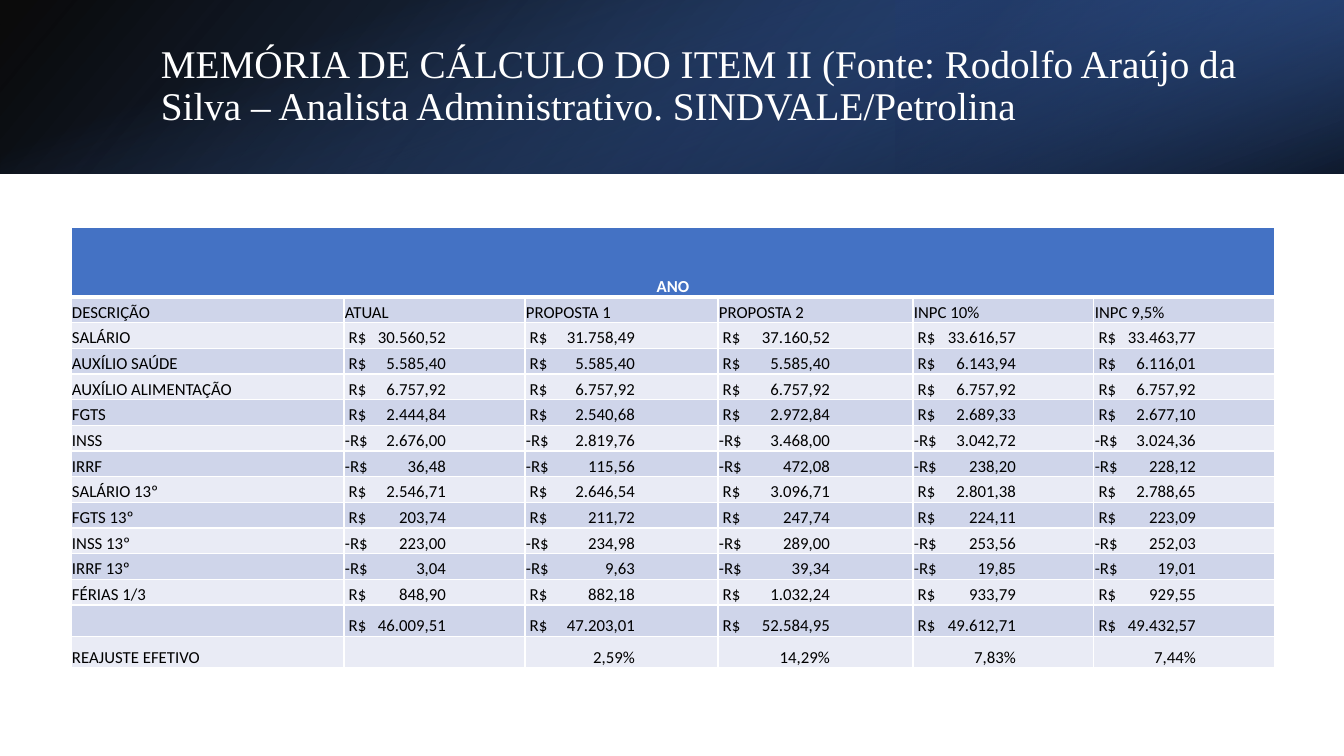
"""Build the slide with the calculation table for item II."""
from lxml import etree
from pptx import Presentation
from pptx.dml.color import RGBColor
from pptx.enum.shapes import MSO_SHAPE as Shape
from pptx.enum.text import MSO_ANCHOR as Anchor, PP_ALIGN as Align
from pptx.oxml import parse_xml
from pptx.oxml.ns import nsdecls, qn
from pptx.util import Pt

PX = 914400 / 100.8
WHITE = RGBColor(0xFF, 0xFF, 0xFF)
BLACK = RGBColor(0x00, 0x00, 0x00)
BLUE = RGBColor(0x44, 0x72, 0xC4)
DEEP_BLUE = RGBColor(0x2F, 0x55, 0x97)
NAVY = RGBColor(0x20, 0x38, 0x64)
BAND_DARK = RGBColor(0xCF, 0xD5, 0xEA)
BAND_LIGHT = RGBColor(0xE9, 0xEB, 0xF5)


def px(*lengths):
    return [round(length * PX) for length in lengths]


def write(frame, text, size=12, font="Calibri", color=BLACK, bold=False,
          align=Align.LEFT, spacing=None, tab=None):
    paragraph = frame.paragraphs[0]
    paragraph.alignment = align
    paragraph.line_spacing = spacing
    if tab:
        tab_list = etree.SubElement(paragraph._p.get_or_add_pPr(), qn("a:tabLst"))
        etree.SubElement(tab_list, qn("a:tab"), pos=str(px(tab)[0]), algn="r")
    run = paragraph.add_run()
    run.text = text
    run.font.size = Pt(size)
    run.font.name = font
    run.font.bold = bold
    run.font.color.rgb = color


presentation = Presentation()
presentation.slide_width, presentation.slide_height = px(1344, 756)
slide = presentation.slides.add_slide(presentation.slide_layouts[6])

BANNER = [
    ((0, 0, 1344, 174), 0, True, 140, [(0, BLACK, 96), (100, DEEP_BLUE, 100)]),
    ((896, 0, 448, 174), 180, True, 320, [(19, NAVY, 68), (100, BLUE, 79)]),
    ((585, -585, 174, 1344), 90, False, 340, [(23, BLUE, 0), (99, BLACK, 74)]),
]
for box, rotation, flipped, angle, stops in BANNER:
    shape = slide.shapes.add_shape(Shape.RECTANGLE, *px(*box))
    shape.rotation = rotation
    properties = shape._element.spPr
    if flipped:
        properties.xfrm.set("flipH", "1")
    stop_xml = "".join(
        f'<a:gs pos="{position * 1000}"><a:srgbClr val="{color}">'
        f'<a:alpha val="{opacity * 1000}"/></a:srgbClr></a:gs>'
        for position, color, opacity in stops)
    properties.append(parse_xml(
        f'<a:gradFill {nsdecls("a")}><a:gsLst>{stop_xml}</a:gsLst>'
        f'<a:lin ang="{angle * 60000}" scaled="0"/></a:gradFill>'))
    shape.line.fill.background()
    shape.shadow.inherit = False

title = slide.shapes.add_textbox(*px(151, 38, 1107, 97)).text_frame
title.word_wrap = True
title.vertical_anchor = Anchor.MIDDLE
write(title, "MEMÓRIA DE CÁLCULO DO ITEM II (Fonte: Rodolfo Araújo da Silva – "
      "Analista Administrativo. SINDVALE/Petrolina",
      size=28, font="Times New Roman", color=WHITE, spacing=0.9)

COLUMN_WIDTHS = [273, 181, 193, 195, 181, 181]
NUMBER_EDGES = [None, 101, 109, 111, 102, 101]
AMOUNTS = [
    ("SALÁRIO", " R$", "30.560,52", "31.758,49", "37.160,52", "33.616,57", "33.463,77"),
    ("AUXÍLIO SAÚDE", " R$", "5.585,40", "5.585,40", "5.585,40", "6.143,94", "6.116,01"),
    ("AUXÍLIO ALIMENTAÇÃO", " R$", "6.757,92", "6.757,92", "6.757,92", "6.757,92", "6.757,92"),
    ("FGTS", " R$", "2.444,84", "2.540,68", "2.972,84", "2.689,33", "2.677,10"),
    ("INSS", "-R$", "2.676,00", "2.819,76", "3.468,00", "3.042,72", "3.024,36"),
    ("IRRF", "-R$", "36,48", "115,56", "472,08", "238,20", "228,12"),
    ("SALÁRIO 13º", " R$", "2.546,71", "2.646,54", "3.096,71", "2.801,38", "2.788,65"),
    ("FGTS 13º", " R$", "203,74", "211,72", "247,74", "224,11", "223,09"),
    ("INSS 13º", "-R$", "223,00", "234,98", "289,00", "253,56", "252,03"),
    ("IRRF 13º", "-R$", "3,04", "9,63", "39,34", "19,85", "19,01"),
    ("FÉRIAS 1/3", " R$", "848,90", "882,18", "1.032,24", "933,79", "929,55"),
    ("", " R$", "46.009,51", "47.203,01", "52.584,95", "49.612,71", "49.432,57"),
]
rows = [["ANO"] + [""] * 5,
        ["DESCRIÇÃO", "ATUAL", "PROPOSTA 1", "PROPOSTA 2", "INPC 10%", "INPC 9,5%"]]
rows += [[label] + [f"{currency}\t{value}" for value in values]
         for label, currency, *values in AMOUNTS]
rows.append(["REAJUSTE EFETIVO", "", "\t2,59%", "\t14,29%", "\t7,83%", "\t7,44%"])

table = slide.shapes.add_table(len(rows), 6, *px(71, 227, 1204, 430)).table
for column, width in zip(table.columns, px(*COLUMN_WIDTHS)):
    column.width = width
for row_index, texts in enumerate(rows):
    header = row_index == 0
    table.rows[row_index].height = px(70 if header else 360 / 14)[0]
    for column_index, text in enumerate(texts):
        cell = table.cell(row_index, column_index)
        cell.margin_left, cell.margin_top, cell.margin_right, cell.margin_bottom = px(1, 1, 1, 0)
        cell.vertical_anchor = Anchor.BOTTOM
        cell.fill.solid()
        cell.fill.fore_color.rgb = BLUE if header else BAND_DARK if row_index % 2 else BAND_LIGHT
        write(cell.text_frame, text, color=WHITE if header else BLACK, bold=header,
              align=Align.CENTER if header else Align.LEFT,
              tab=NUMBER_EDGES[column_index] if "\t" in text else None)
        for position, side in enumerate("LRTB"):
            thick = (row_index, side) in [(0, "B"), (1, "T")]
            cell._tc.get_or_add_tcPr().insert(position, parse_xml(
                f'<a:ln{side} {nsdecls("a")} w="{Pt(3 if thick else 1)}"><a:solidFill>'
                f'<a:srgbClr val="{WHITE}"/></a:solidFill></a:ln{side}>'))
table.cell(0, 0).merge(table.cell(0, 5))

presentation.save("out.pptx")
